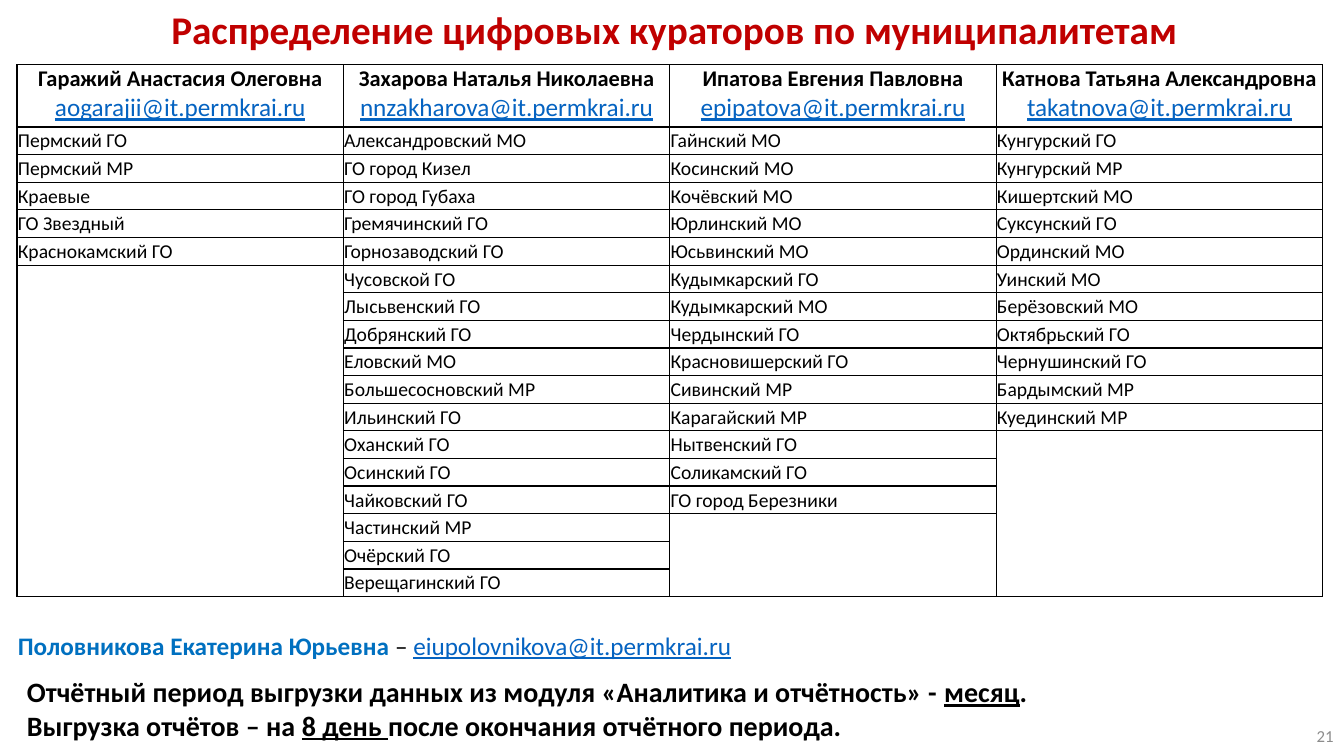
from dataclasses import dataclass

from lxml.etree import SubElement
from pptx import Presentation
from pptx.dml.color import RGBColor
from pptx.enum.text import MSO_ANCHOR as Anchor, PP_ALIGN as Align
from pptx.oxml.ns import qn
from pptx.util import Cm, Pt

FONT = "Calibri"
BLACK, RED, BLUE, LINK, GREY = "000000", "C00000", "0070C0", "0563C1", "8C8C8C"


@dataclass(frozen=True)
class Piece:
    text: str
    size: float
    color: str = BLACK
    bold: bool = False
    underline: bool = False


@dataclass(frozen=True)
class Box:
    left: float
    top: float
    width: float
    height: float

    def lengths(self) -> tuple:
        return Cm(self.left), Cm(self.top), Cm(self.width), Cm(self.height)


@dataclass(frozen=True)
class Curator:
    name: str
    email: str
    places: tuple


@dataclass(frozen=True)
class Note:
    box: Box
    lines: tuple
    align: Align = Align.LEFT
    anchor: Anchor = Anchor.TOP
    wrap: bool = True


CURATORS = (
    Curator("Гаражий Анастасия Олеговна", "aogarajii@it.permkrai.ru", (
        "Пермский ГО", "Пермский МР", "Краевые", "ГО Звездный", "Краснокамский ГО")),
    Curator("Захарова Наталья Николаевна", "nnzakharova@it.permkrai.ru", (
        "Александровский МО", "ГО город Кизел", "ГО город Губаха", "Гремячинский ГО",
        "Горнозаводский ГО", "Чусовской ГО", "Лысьвенский ГО", "Добрянский ГО",
        "Еловский МО", "Большесосновский МР", "Ильинский ГО", "Оханский ГО",
        "Осинский ГО", "Чайковский ГО", "Частинский МР", "Очёрский ГО",
        "Верещагинский ГО")),
    Curator("Ипатова Евгения Павловна", "epipatova@it.permkrai.ru", (
        "Гайнский МО", "Косинский МО", "Кочёвский МО", "Юрлинский МО", "Юсьвинский МО",
        "Кудымкарский ГО", "Кудымкарский МО", "Чердынский ГО", "Красновишерский ГО",
        "Сивинский МР", "Карагайский МР", "Нытвенский ГО", "Соликамский ГО",
        "ГО город Березники")),
    Curator("Катнова Татьяна Александровна", "takatnova@it.permkrai.ru", (
        "Кунгурский ГО", "Кунгурский МР", "Кишертский МО", "Суксунский ГО",
        "Ординский МО", "Уинский МО", "Берёзовский МО", "Октябрьский ГО",
        "Чернушинский ГО", "Бардымский МР", "Куединский МР")),
)

NOTES = (
    Note(Box(0.2, 15.75, 18.82, 1.02), ((
        Piece("Половникова Екатерина Юрьевна ", 18, BLUE, bold=True),
        Piece("– ", 18),
        Piece("eiupolovnikova@it.permkrai.ru", 18, LINK, underline=True)),), wrap=False),
    Note(Box(0.43, 16.87, 31.34, 1.96), (
        (Piece("Отчётный период выгрузки данных из модуля «Аналитика и отчётность» - ", 20, bold=True),
         Piece("месяц", 20, bold=True, underline=True),
         Piece(".", 20, bold=True)),
        (Piece("Выгрузка отчётов – на ", 20, bold=True),
         Piece("8 день ", 20, bold=True, underline=True),
         Piece("после окончания отчётного периода.", 20, bold=True)))),
    Note(Box(26.24, 18.03, 7.62, 1.02), ((Piece("21", 12, GREY),),),
         align=Align.RIGHT, anchor=Anchor.MIDDLE),
)

TABLE = Box(0.43, 1.63, 32.9, 13.41)
HEADER_HEIGHT = 1.57


def rgb(color: str) -> RGBColor:
    return RGBColor.from_string(color)


def write(frame, lines: tuple, align: Align) -> None:
    for index, pieces in enumerate(lines):
        paragraph = frame.paragraphs[0] if index == 0 else frame.add_paragraph()
        paragraph.alignment = align
        for piece in pieces:
            run = paragraph.add_run()
            run.text = piece.text
            font = run.font
            font.name, font.size = FONT, Pt(piece.size)
            font.bold, font.underline = piece.bold, piece.underline
            font.color.rgb = rgb(piece.color)


def draw_title(slide, text: str) -> None:
    title = slide.shapes.title
    title.left, title.top, title.width, title.height = Box(0.97, 0, 32.03, 1.45).lengths()
    title.text_frame.vertical_anchor = Anchor.TOP
    write(title.text_frame, ((Piece(text, 28, RED, bold=True),),), Align.CENTER)


def draw_note(slide, note: Note) -> None:
    frame = slide.shapes.add_textbox(*note.box.lengths()).text_frame
    frame.word_wrap = note.wrap
    frame.vertical_anchor = note.anchor
    write(frame, note.lines, note.align)


def format_cell(cell) -> None:
    cell.margin_left = cell.margin_right = cell.margin_top = Cm(0.02)
    cell.margin_bottom = 0
    cell.vertical_anchor = Anchor.MIDDLE
    properties = cell._tc.get_or_add_tcPr()
    for side in ("lnL", "lnR", "lnT", "lnB"):
        line = SubElement(properties, qn(f"a:{side}"), w=str(Pt(1)))
        SubElement(SubElement(line, qn("a:solidFill")), qn("a:srgbClr"), val=BLACK)
    cell.fill.background()


def draw_table(slide, curators: tuple) -> None:
    depth = max(len(curator.places) for curator in curators)
    table = slide.shapes.add_table(depth + 1, len(curators), *TABLE.lengths()).table
    table.first_row = table.horz_banding = False
    for row in table.rows:
        row.height = Cm((TABLE.height - HEADER_HEIGHT) / depth)
    table.rows[0].height = Cm(HEADER_HEIGHT)
    for cell in table.iter_cells():
        format_cell(cell)

    for column, curator in enumerate(curators):
        table.columns[column].width = Cm(TABLE.width / len(curators))
        header = table.cell(0, column)
        header.vertical_anchor = Anchor.TOP
        write(header.text_frame, (
            (Piece(curator.name, 16, bold=True),),
            (Piece(curator.email, 18, LINK, underline=True),)), Align.CENTER)
        for row, place in enumerate(curator.places, start=1):
            write(table.cell(row, column).text_frame, ((Piece(place, 14),),), Align.LEFT)
        first_free = len(curator.places) + 1
        for row in range(first_free, depth + 1):
            empty = table.cell(row, column).text_frame.paragraphs[0]
            SubElement(empty._p, qn("a:endParaRPr"), sz="1400")
        if first_free < depth:
            table.cell(first_free, column).merge(table.cell(depth, column))


def main() -> None:
    presentation = Presentation()
    presentation.slide_width, presentation.slide_height = Cm(33.87), Cm(19.05)
    slide = presentation.slides.add_slide(presentation.slide_layouts[5])
    draw_title(slide, "Распределение цифровых кураторов по муниципалитетам")
    draw_table(slide, CURATORS)
    for note in NOTES:
        draw_note(slide, note)
    presentation.save("out.pptx")


if __name__ == "__main__":
    main()
